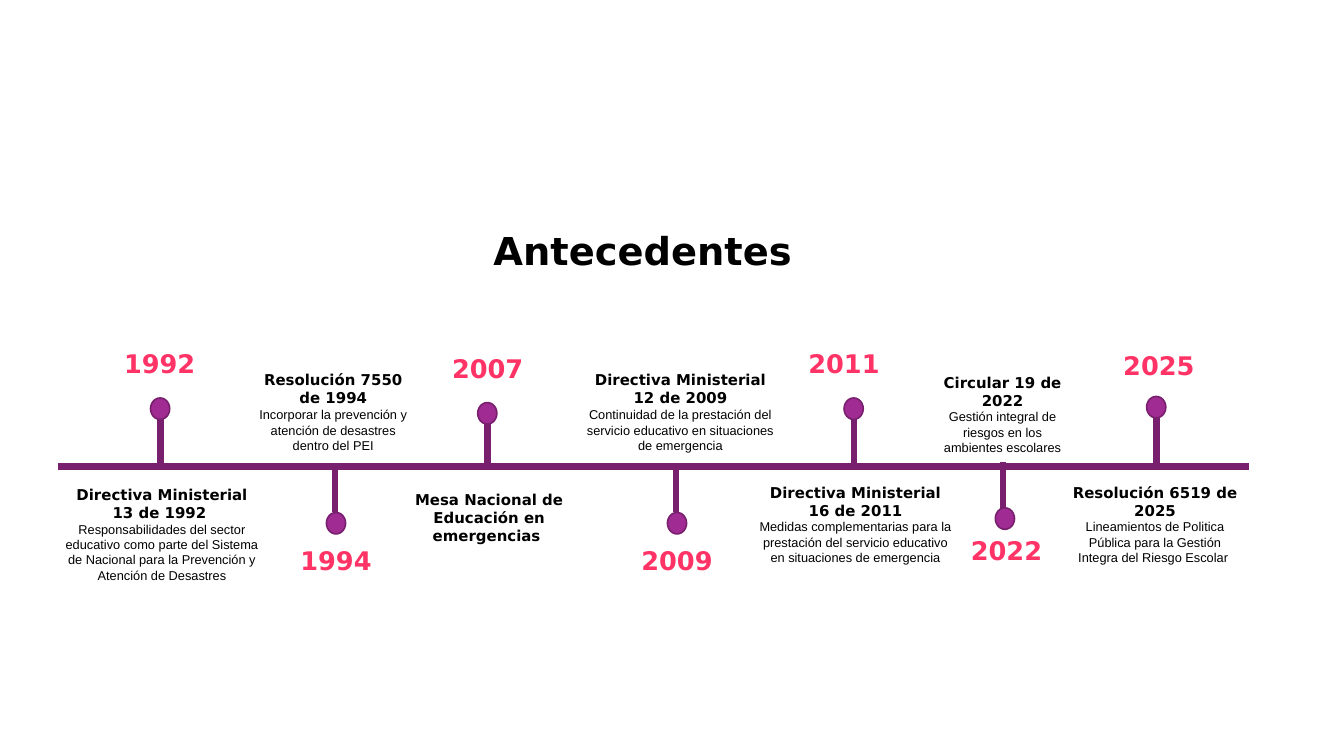
from pptx import Presentation
from pptx.dml.color import RGBColor
from pptx.enum.shapes import MSO_CONNECTOR, MSO_SHAPE
from pptx.enum.text import MSO_ANCHOR, MSO_AUTO_SIZE, PP_ALIGN
from pptx.oxml.ns import qn
from pptx.util import Inches, Pt

LINE, OVAL = MSO_CONNECTOR.STRAIGHT, MSO_SHAPE.OVAL
TOP, CENTER = MSO_ANCHOR.TOP, PP_ALIGN.CENTER
GROW = MSO_AUTO_SIZE.SHAPE_TO_FIT_TEXT
HEAD, BODY = "DejaVu Sans", "Arial"
COLORS = {"text": "000000", "year": "FF3366", "line": "78206E", "dot": "A02B93"}

AXIS = 6.07
STEM = 0.61

# Year, stem x and top, dot left and top, year box (left, top, width),
# text box (left, top, width, height), heading, note
EVENTS = [
    ("1992", (2.09, 5.44), (1.96, 5.18), (1.3, 4.48, 1.56),
     (0.74, 6.27, 2.74, 1.38), "Directiva Ministerial 13 de 1992 ",
     "Responsabilidades del sector educativo como parte del Sistema de "
     "Nacional para la Prevención y Atención de Desastres"),
    ("1994", (4.36, 6.06), (4.25, 6.67), (3.57, 7.04, 1.61),
     (3.25, 4.78, 2.18, 1.18), "Resolución 7550 de 1994",
     "Incorporar la prevención y atención de desastres dentro del PEI"),
    ("2007", (6.35, 5.5), (6.22, 5.24), (5.57, 4.54, 1.56),
     (5, 6.34, 2.74, 1.02), "Mesa Nacional de Educación en emergencias ", ""),
    ("2009", (8.8, 6.06), (8.69, 6.67), (8.01, 7.04, 1.61),
     (7.49, 4.78, 2.74, 1.18), "Directiva Ministerial 12 de 2009",
     "Continuidad de la prestación del servicio educativo en situaciones "
     "de emergencia"),
    ("2011", (11.12, 5.44), (10.99, 5.18), (10.31, 4.48, 1.36),
     (9.77, 6.24, 2.74, 1.75), "Directiva Ministerial 16 de 2011",
     "Medidas complementarias para la prestación del servicio educativo "
     "en situaciones de emergencia"),
    ("2022", (13.06, 6.02), (12.96, 6.61), (12.38, 6.91, 1.45),
     (12.13, 4.81, 1.85, 1.18), "Circular 19 de 2022",
     "Gestión integral de riesgos en los ambientes escolares"),
    ("2025", (15.06, 5.44), (14.93, 5.16), (14.41, 4.51, 1.36),
     (13.82, 6.24, 2.44, 1.18), "Resolución 6519 de 2025",
     "Lineamientos de Politica Pública para la Gestión Integra del "
     "Riesgo Escolar "),
]


def color(name):
    return RGBColor.from_string(COLORS[name])


def write(shape, lines):
    """Fill a text shape with centred lines of (text, size, font, bold, colour)."""
    frame = shape.text_frame
    frame.word_wrap = True
    frame.auto_size = GROW
    frame.vertical_anchor = TOP
    frame.text = "\n".join(line[0] for line in lines)
    for par, (_, size, font, bold, tint) in zip(frame.paragraphs, lines):
        par.alignment = CENTER
        for run in par.runs:
            run.font.size = Pt(size)
            run.font.name = font
            run.font.bold = bold
            run.font.color.rgb = color(tint)


def add_text(slide, left, top, width, height, lines):
    box = slide.shapes.add_textbox(
        Inches(left), Inches(top), Inches(width), Inches(height))
    write(box, lines)


def add_title(slide, text):
    title = slide.shapes.title
    title.left, title.top = Inches(3.95), Inches(2.9)
    title.width, title.height = Inches(9.01), Inches(0.71)
    write(title, [(text, 36, HEAD, True, "text")])
    title.text_frame.paragraphs[0].line_spacing = 1.0


def add_line(slide, x1, y1, x2, y2):
    line = slide.shapes.add_connector(
        LINE, Inches(x1), Inches(y1), Inches(x2), Inches(y2))
    line.line.color.rgb = color("line")
    line.line.width = Pt(6)
    props = line._element.spPr
    props.append(props.makeelement(qn("a:effectLst"), {}))


def add_dot(slide, left, top):
    dot = slide.shapes.add_shape(
        OVAL, Inches(left), Inches(top), Inches(0.25), Inches(0.28))
    dot.shadow.inherit = False
    dot.fill.solid()
    dot.fill.fore_color.rgb = color("dot")
    dot.line.color.rgb = color("line")
    dot.line.width = Pt(1.5)


def add_event(slide, year, stem, dot, label, box, head, note):
    x, y = stem
    add_line(slide, x, y, x, y + STEM)
    add_dot(slide, *dot)
    add_text(slide, *label, 0.5, [(year, 24, HEAD, True, "year")])
    lines = [(head, 14, HEAD, True, "text")]
    if note:
        lines.append((note, 12, BODY, False, "text"))
    add_text(slide, *box, lines)


def main():
    deck = Presentation()
    deck.slide_width, deck.slide_height = Inches(17.5), Inches(9.84)
    slide = deck.slides.add_slide(deck.slide_layouts[5])

    # Title
    add_title(slide, "Antecedentes ")

    # Timeline
    add_line(slide, 0.75, AXIS, 16.26, AXIS)
    for event in EVENTS:
        add_event(slide, *event)

    deck.save("out.pptx")


if __name__ == "__main__":
    main()
